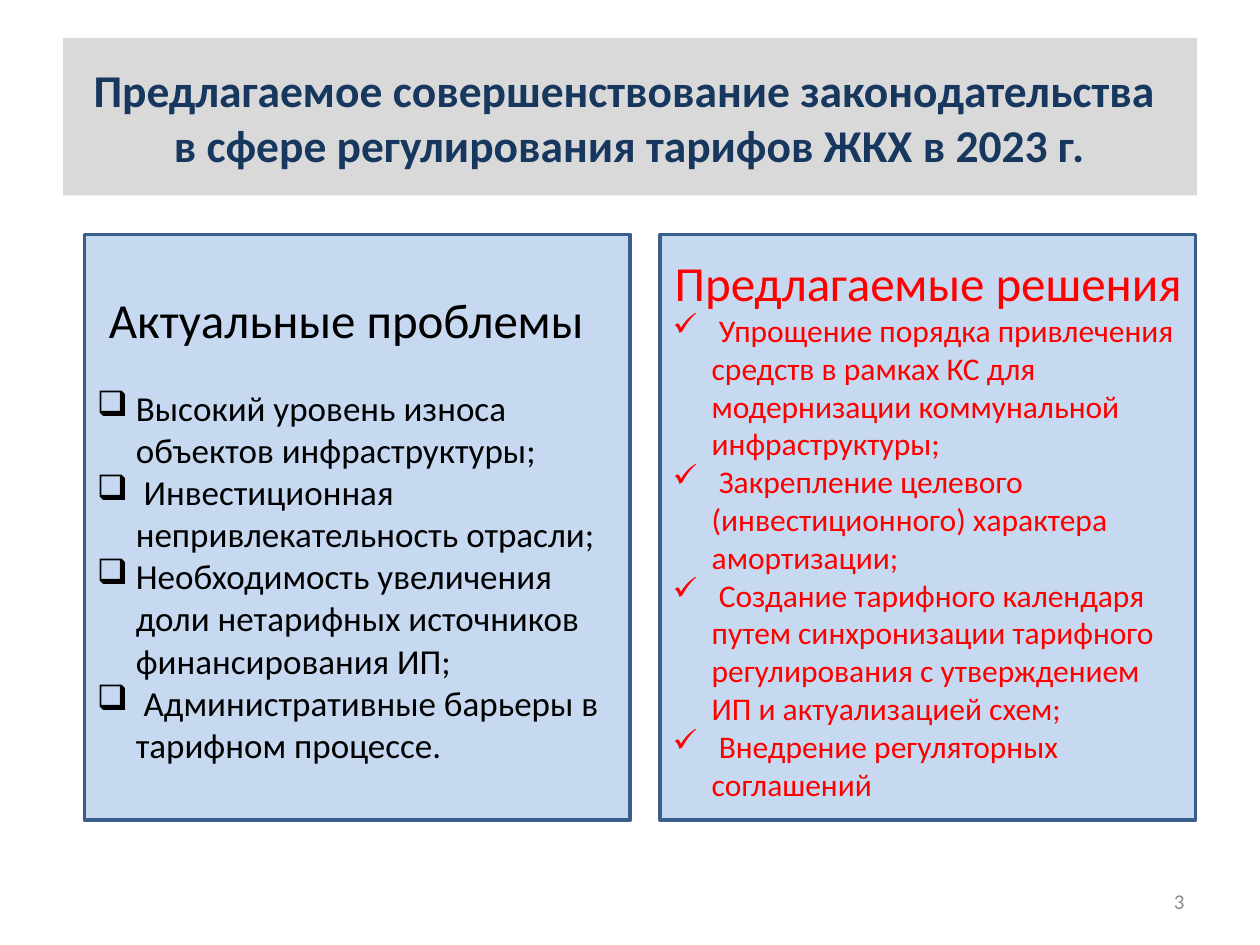
from dataclasses import dataclass

import pptx
import pptx.dml.color
import pptx.enum.shapes
import pptx.enum.text
import pptx.oxml
import pptx.oxml.ns
import pptx.util

Inches = pptx.util.Inches
Pt = pptx.util.Pt
RGBColor = pptx.dml.color.RGBColor
Align = pptx.enum.text.PP_ALIGN
Anchor = pptx.enum.text.MSO_ANCHOR

FONT = "Calibri"
GREY = RGBColor(0xD9, 0xD9, 0xD9)
NAVY = RGBColor(0x17, 0x37, 0x5E)
PALE = RGBColor(0xC6, 0xD9, 0xF1)
EDGE = RGBColor(0x3A, 0x5F, 0x8C)
BLACK = RGBColor(0, 0, 0)
RED = RGBColor(0xFF, 0, 0)
MUTED = RGBColor(0x8C, 0x8C, 0x8C)

TOP, HEIGHT = 1.86, 4.65
INDENT = Inches(0.31)


@dataclass
class Panel:
    left: float
    width: float
    head: str
    gap: float
    mark: str
    size: float
    color: RGBColor
    items: list[str]


PANELS = [
    Panel(0.67, 4.33, "Актуальные проблемы  ", 22, "❑", 20, BLACK, [
        "Высокий уровень износа объектов инфраструктуры;",
        " Инвестиционная непривлекательность отрасли;",
        "Необходимость увеличения доли нетарифных источников финансирования ИП;",
        " Административные барьеры в тарифном процессе.",
    ]),
    Panel(5.24, 4.25, "Предлагаемые решения ", 0, "✓", 18, RED, [
        " Упрощение порядка привлечения средств в рамках КС для "
        "модернизации коммунальной инфраструктуры;",
        " Закрепление целевого (инвестиционного) характера амортизации;",
        " Создание тарифного календаря путем синхронизации тарифного "
        "регулирования с утверждением ИП и актуализацией схем;",
        " Внедрение регуляторных соглашений",
    ]),
]


def add_run(para, text: str, size: float, color: RGBColor, bold: bool = False) -> None:
    run = para.add_run()
    run.text = text
    run.font.name = FONT
    run.font.size = Pt(size)
    run.font.bold = bold
    run.font.color.rgb = color


def set_bullet(para, mark: str) -> None:
    """Give the paragraph a hanging bullet."""
    props = para._p.get_or_add_pPr()
    props.set("marL", str(INDENT))
    props.set("indent", str(-INDENT))
    bullet = pptx.oxml.parse_xml(
        f'<a:buChar {pptx.oxml.ns.nsdecls("a")} char="{mark}"/>')
    props.append(bullet)


def add_title(slide) -> None:
    title = slide.shapes.title
    title.left, title.top = Inches(0.5), Inches(0.3)
    title.width, title.height = Inches(9), Inches(1.25)
    title.fill.solid()
    title.fill.fore_color.rgb = GREY
    frame = title.text_frame
    frame.auto_size = pptx.enum.text.MSO_AUTO_SIZE.NONE
    frame.vertical_anchor = Anchor.MIDDLE
    para = frame.paragraphs[0]
    para.alignment = Align.CENTER
    add_run(para, "Предлагаемое совершенствование законодательства ", 26, NAVY, True)
    para.add_line_break()
    add_run(para, "в сфере регулирования тарифов ЖКХ в 2023 г.", 26, NAVY, True)


def add_panel(slide, panel: Panel) -> None:
    box = slide.shapes.add_shape(
        pptx.enum.shapes.MSO_SHAPE.RECTANGLE,
        Inches(panel.left), Inches(TOP), Inches(panel.width), Inches(HEIGHT))
    box.shadow.inherit = False
    box.fill.solid()
    box.fill.fore_color.rgb = PALE
    box.line.color.rgb = EDGE
    box.line.width = Pt(2)
    frame = box.text_frame
    frame.word_wrap = True
    frame.vertical_anchor = Anchor.MIDDLE
    head = frame.paragraphs[0]
    head.alignment = Align.CENTER
    head.space_after = Pt(panel.gap)
    add_run(head, panel.head, 28, panel.color)
    for item in panel.items:
        para = frame.add_paragraph()
        para.alignment = Align.LEFT
        set_bullet(para, panel.mark)
        add_run(para, item, panel.size, panel.color)


def add_number(slide) -> None:
    box = slide.shapes.add_textbox(
        Inches(7.17), Inches(6.95), Inches(2.33), Inches(0.4))
    frame = box.text_frame
    frame.word_wrap = True
    frame.vertical_anchor = Anchor.MIDDLE
    para = frame.paragraphs[0]
    para.alignment = Align.RIGHT
    add_run(para, "3", 12, MUTED)


def main() -> None:
    deck = pptx.Presentation()
    deck.slide_width, deck.slide_height = Inches(10), Inches(7.5)
    slide = deck.slides.add_slide(deck.slide_layouts.get_by_name("Title Only"))
    add_number(slide)
    add_title(slide)
    for panel in PANELS:
        add_panel(slide, panel)
    deck.save("out.pptx")


if __name__ == "__main__":
    main()
